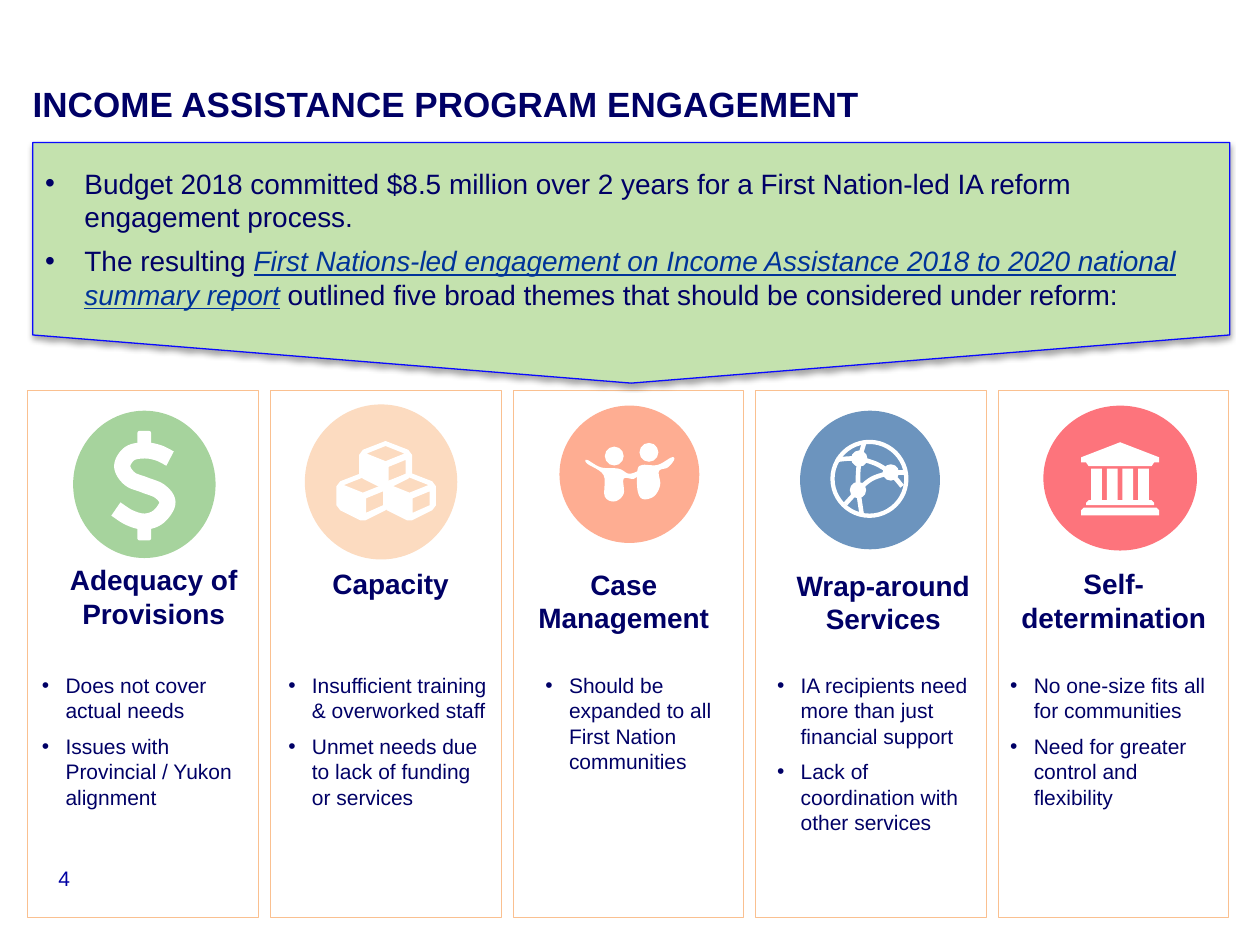
import math

import pptx
import pptx.dml.color
import pptx.enum.shapes
import pptx.enum.text
import pptx.oxml
import pptx.oxml.ns
import pptx.util

Pt = pptx.util.Pt
SHAPE = pptx.enum.shapes.MSO_SHAPE
ANCHOR = pptx.enum.text.MSO_ANCHOR
ALIGN = pptx.enum.text.PP_ALIGN
NAVY, WHITE, PEACH = "000066", "FFFFFF", "FAC090"
GRID = 0.72  # points in one step of the icon drawing grid

PANEL_LEFT, PANEL_TOP, PANEL_PITCH = 15.84, 223.2, 138.6
PANEL_WIDTH, PANEL_HEIGHT = 131.8, 301

# heading, heading box (left, top), list left, circle box, circle colour, bullets
THEMES = [
    ("Adequacy of Provisions", (21.6, 318.2), 16.9, (41.8, 234.7, 81.4, 84.2), "A6D39D",
     ["Does not cover actual needs", "Issues with Provincial / Yukon alignment"]),
    ("Capacity", (157, 320.4), 157.7, (174.2, 231.1, 87.1, 88.6), "FCDBC0",
     ["Insufficient training & overworked staff",
      "Unmet needs due to lack of funding or services"]),
    ("Case Management", (290.2, 320.7), 304.6, (319.7, 231.8, 79.9, 78.5), "FEAD92",
     ["Should be expanded to all First Nation communities"]),
    ("Wrap-around Services", (438.5, 321.1), 437, (457.2, 234.7, 79.9, 79.2), "6C94BE",
     ["IA recipients need more than just financial support",
      "Lack of coordination with other services"]),
    ("Self-determination", (570.2, 320.4), 570.2, (596.2, 231.8, 87.8, 82.8), "FD747C",
     ["No one-size fits all for communities", "Need for greater control and flexibility"]),
]


def rgb(value):
    return pptx.dml.color.RGBColor.from_string(value)


def add_run(p, text, size=16, color=NAVY, bold=False, italic=False, underline=False):
    r = p.add_run()
    r.text = text
    r.font.name, r.font.size, r.font.color.rgb = "Arial", Pt(size), rgb(color)
    r.font.bold, r.font.italic, r.font.underline = bold, italic, underline


def add_bullet(p, indent, after):
    pPr = p._p.get_or_add_pPr()
    pPr.set("marL", str(Pt(indent)))
    pPr.set("indent", str(-Pt(indent)))
    pPr.append(pptx.oxml.parse_xml(
        f'<a:buFont {pptx.oxml.ns.nsdecls("a")} typeface="Arial"/>'))
    pPr.append(pptx.oxml.parse_xml(
        f'<a:buChar {pptx.oxml.ns.nsdecls("a")} char="•"/>'))
    p.alignment = ALIGN.LEFT
    p.space_after = Pt(after)


def next_paragraph(tf, index):
    return tf.add_paragraph() if index else tf.paragraphs[0]


def add_text_box(s, left, top, width, height):
    tf = s.shapes.add_textbox(Pt(left), Pt(top), Pt(width), Pt(height)).text_frame
    tf.word_wrap = True
    return tf


def add_label(s, text, box, **font):
    p = add_text_box(s, *box).paragraphs[0]
    p.alignment = ALIGN.CENTER
    add_run(p, text, **font)


def paint(sp, fill=None, line=None, width=0.75):
    sp.shadow.inherit = False
    if fill:
        sp.fill.solid()
        sp.fill.fore_color.rgb = rgb(fill)
    else:
        sp.fill.background()
    if line:
        sp.line.color.rgb = rgb(line)
        sp.line.width = Pt(width)
    else:
        sp.line.fill.background()
    return sp


def add_shape(s, kind, box, **look):
    return paint(s.shapes.add_shape(kind, *map(Pt, box)), **look)


def add_dot(s, origin, center, radius, kind=SHAPE.OVAL):
    """Add a round white shape in icon grid steps."""
    corner = [(o + c - radius) * GRID for o, c in zip(origin, center)]
    return add_shape(s, kind, (*corner, 2 * radius * GRID, 2 * radius * GRID), fill=WHITE)


def add_outline(s, origin, contours, stroke=None):
    """Draw closed filled contours, or open ones when a stroke width is given."""
    contours = [[(x * GRID * 100, y * GRID * 100) for x, y in c] for c in contours]
    fb = s.shapes.build_freeform(*contours[0][0], scale=Pt(0.01))
    for i, points in enumerate(contours):
        if i:
            fb.move_to(*points[0])
        fb.add_line_segments(points[1:], close=stroke is None)
    sp = fb.convert_to_shape(*(Pt(o * GRID) for o in origin))
    look = {"line": WHITE, "width": stroke} if stroke else {"fill": WHITE}
    paint(sp, **look)


def smooth(points, closed=False, steps=6):
    """Catmull-Rom curve through the points."""
    n = len(points)
    at = (lambda i: points[i % n]) if closed else (lambda i: points[max(0, min(i, n - 1))])
    curve = []
    for i in range(n if closed else n - 1):
        a, b, c, d = (at(i + k) for k in (-1, 0, 1, 2))
        for t in (k / steps for k in range(steps)):
            curve.append(tuple(
                (2 * q + (r - p) * t + (2 * p - 5 * q + 4 * r - u) * t ** 2
                 + (3 * q - p - 3 * r + u) * t ** 3) / 2
                for p, q, r, u in zip(a, b, c, d)))
    return curve if closed else curve + [points[-1]]


def rect(left, top, right, bottom):
    return [(left, top), (right, top), (right, bottom), (left, bottom)]


def draw_dollar(s):
    origin = (88, 342)
    curve = [(47, 22), (38, 17.5), (27, 15.5), (15, 18), (9, 28), (15, 38), (27, 43),
             (39, 48), (45, 57), (38, 68), (27, 72), (15, 69), (4, 62)]
    add_outline(s, origin, [smooth(curve)], stroke=9.2)
    for top in (0, 74):
        add_shape(s, SHAPE.ROUNDED_RECTANGLE,
                  ((origin[0] + 21) * GRID, (origin[1] + top) * GRID, 11 * GRID, 13 * GRID),
                  fill=WHITE)


def draw_cubes(s):
    cube = [
        [(0, 0), (18, 7), (21, 11), (21, 26), (18, 30), (2, 38), (-2, 38),
         (-18, 30), (-21, 26), (-21, 11), (-18, 7)],
        [(-15, 10), (0, 4), (15, 10), (0, 16)],
        [(2.5, 20.5), (16, 15), (16, 26), (2.5, 32)],
    ]
    for origin in ((306, 350), (288, 375), (325, 375)):
        add_outline(s, origin, cube)


def draw_people(s):
    origin = (464, 352)
    left = [(45, 23), (39, 28), (31, 28), (31, 40), (24, 46), (16, 42), (15, 25),
            (2, 16), (2, 13), (13, 19), (27, 20), (35, 24), (42, 22), (44, 20)]
    right = [(42, 21), (46, 17), (58, 17), (69, 11), (71, 13), (66, 19), (59, 22),
             (60, 33), (55, 42), (46, 44), (42, 37)]
    add_outline(s, origin, [smooth(left, closed=True)])
    add_outline(s, origin, [smooth(right, closed=True)])
    add_dot(s, origin, (23.5, 10), 7.5)
    add_dot(s, origin, (51, 7), 7.5)


def draw_network(s):
    origin = (659, 349)
    ring = add_dot(s, origin, (31, 31), 31, kind=SHAPE.DONUT)
    ring.adjustments[0] = 0.055
    top, right, low = (23, 15), (48, 26), (22, 40)
    links = [
        [(27, 2), top], [(5, 16), (14, 15), top], [top, (36, 19), right],
        [top, (22, 28), low], [low, (33, 31), right], [low, (12, 51)],
        [low, (25, 60)], [right, (60, 26)], [right, (57, 37)],
    ]
    add_outline(s, origin, [smooth(link) for link in links], stroke=2.6)
    for node in (top, right, low):
        add_dot(s, origin, node, 6.5)


def draw_institution(s):
    roof = [(0, 12), (31, 0), (62, 12), (62, 16), (58, 16), (56, 19), (6, 19),
            (4, 16), (0, 16)]
    columns = [rect(x, 21, x + 8.6, 46) for x in (8 + 12.4 * i for i in range(4))]
    steps = [[(4, 50), (4, 48), (6, 46), (56, 46), (58, 48), (58, 50)],
             [(0, 58), (0, 54), (2, 52), (60, 52), (62, 54), (62, 58)]]
    add_outline(s, (858, 351), [roof, *columns, *steps])


def add_theme(s, index, heading, heading_at, list_left, circle, color, bullets):
    add_shape(s, SHAPE.RECTANGLE,
              (PANEL_LEFT + index * PANEL_PITCH, PANEL_TOP, PANEL_WIDTH, PANEL_HEIGHT),
              line=PEACH, width=0.25)
    add_shape(s, SHAPE.OVAL, circle, fill=color)
    add_label(s, heading, (*heading_at, 132.5, 50), bold=True)
    tf = add_text_box(s, list_left, 380.9, PANEL_WIDTH, 134)
    for i, text in enumerate(bullets):
        p = next_paragraph(tf, i)
        add_bullet(p, 13.5, 6 if i < len(bullets) - 1 else 0)
        add_run(p, text, size=12)


def add_banner(s):
    sp = add_shape(s, SHAPE.FLOWCHART_OFFPAGE_CONNECTOR, (18.7, 81.4, 684, 137.5),
                   fill="C4E2AE", line="0A0AFF")
    effects = sp._element.spPr.find(pptx.oxml.ns.qn("a:effectLst"))
    effects.append(pptx.oxml.parse_xml(
        f'<a:outerShdw {pptx.oxml.ns.nsdecls("a")} blurRad="{Pt(3.1)}" dist="{Pt(1.8)}" '
        'dir="5400000" rotWithShape="0"><a:srgbClr val="000000">'
        '<a:alpha val="35000"/></a:srgbClr></a:outerShdw>'))
    tf = sp.text_frame
    tf.word_wrap = True
    tf.vertical_anchor = ANCHOR.MIDDLE
    report = {"color": "003399", "italic": True, "underline": True}
    points = [
        [("Budget 2018 committed $8.5 million over 2 years for a First Nation-led IA reform "
          "engagement process.", {})],
        [("The resulting ", {}),
         ("First Nations-led engagement on Income Assistance 2018 to 2020 national "
          "summary report", report),
         (" outlined five broad themes that should be considered under reform:", {})],
    ]
    for i, runs in enumerate(points):
        p = next_paragraph(tf, i)
        add_bullet(p, 22.5, 6)
        for text, font in runs:
            add_run(p, text, **font)


def set_title(s, text):
    sp = s.shapes.title
    sp.left, sp.top, sp.width, sp.height = map(Pt, (18.7, 47.5, 617.8, 23.8))
    tf = sp.text_frame
    tf.margin_left = tf.margin_top = tf.margin_right = tf.margin_bottom = 0
    tf.auto_size = pptx.enum.text.MSO_AUTO_SIZE.NONE
    tf.vertical_anchor = ANCHOR.MIDDLE
    p = tf.paragraphs[0]
    p.alignment = ALIGN.LEFT
    p.line_spacing = Pt(24)
    add_run(p, text, size=20, bold=True)


def main():
    prs = pptx.Presentation()
    prs.slide_width, prs.slide_height = Pt(720), Pt(540)
    s = prs.slides.add_slide(prs.slide_layouts[5])
    set_title(s, "INCOME ASSISTANCE PROGRAM ENGAGEMENT")
    for i, theme in enumerate(THEMES):
        add_theme(s, i, *theme)
    for draw in (draw_dollar, draw_cubes, draw_people, draw_network, draw_institution):
        draw(s)
    add_banner(s)
    add_label(s, "4", (2.9, 491, 67.7, 21.6), size=12, color="0000A3")
    prs.save("out.pptx")


if __name__ == "__main__":
    main()
